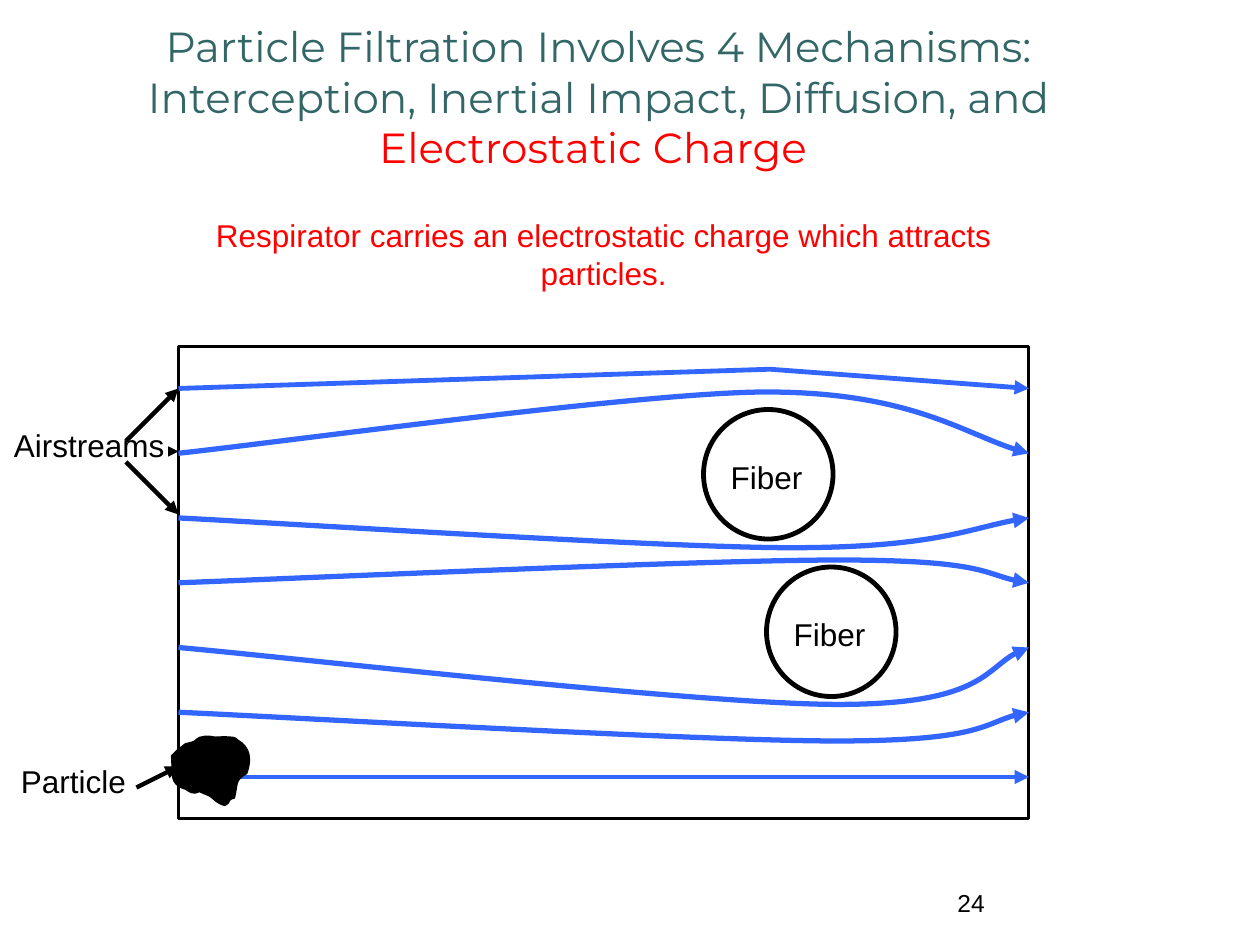
from pptx import Presentation
from pptx.dml.color import RGBColor
from pptx.enum.shapes import MSO_CONNECTOR as Conn, MSO_SHAPE as Form
from pptx.enum.text import MSO_ANCHOR as Anchor, MSO_AUTO_SIZE as Fit, PP_ALIGN as Align
from pptx.oxml.ns import qn
from pptx.oxml.xmlchemy import OxmlElement as Elem
from pptx.util import Pt

BLACK = RGBColor(0, 0, 0)
BLUE = RGBColor(0x33, 0x66, 0xFF)
TEAL = RGBColor(0x33, 0x66, 0x66)
RED = RGBColor(0xFF, 0, 0)

# Start point, then three points for each Bezier curve
BLOB = [
    (30, 2), (26, 1), (22, 0), (18, 1.4), (16.5, 2), (16, 3), (15, 3.6),
    (13.7, 4.3), (10, 5), (10, 5), (3.6, 10), (5.8, 8), (2, 12),
    (3, 22), (0, 28), (10, 31), (13, 33), (14.4, 34), (18, 32.4),
    (19.4, 33), (21.6, 34), (24, 35), (27, 37.4), (28, 39), (32.4, 40.3),
    (37, 38), (33, 37.4), (38, 36), (40, 28), (38, 26), (45, 22),
    (48, 14), (47, 7), (40, 3), (39, 2), (38, 1.4), (37.4, 1.4),
    (32, 0.7), (27, 1.4), (23, 1.4),
]
# Peak x, peak y and last control x of each curved airstream
BENDS = [(336, 26, 454), (350, 115, 457), (377, 122, 463),
         (377, 204.5, 463), (376, 225.4, 463)]


def write(frame, text, size=18, font="Arial", color=BLACK, align=Align.CENTER):
    """Add a run to the first paragraph of a text frame."""
    para = frame.paragraphs[0]
    para.alignment = align
    run = para.add_run()
    run.text = text
    run.font.size = Pt(size)
    run.font.name = font
    run.font.color.rgb = color


def label(slide, text, x, y, w, h=29, **style):
    frame = slide.shapes.add_textbox(Pt(x), Pt(y), Pt(w), Pt(h)).text_frame
    frame.word_wrap = True
    write(frame, text, **style)


def outline(shape, color, width):
    shape.line.color.rgb = color
    shape.line.width = Pt(width)


def point(shape):
    """Put an arrowhead at the end of a line."""
    tail = Elem("a:tailEnd")
    tail.set("type", "triangle")
    shape.line._get_or_add_ln().append(tail)


def arrow(slide, start, end, color=BLACK, width=2.5):
    line = slide.shapes.add_connector(Conn.STRAIGHT, *map(Pt, start + end))
    outline(line, color, width)
    line._element.spPr.append(Elem("a:effectLst"))
    point(line)


def trace(slide, x, y, points, color, width, curved=True, filled=False):
    """Draw a free outline; if curved, each three points make a Bezier curve."""
    spots = [(Pt(x + px), Pt(y + py)) for px, py in points]
    build = slide.shapes.build_freeform(*spots[0])
    build.add_line_segments(spots[1:], close=False)
    shape = build.convert_to_shape()
    shape.shadow.inherit = False
    if filled:
        shape.fill.solid()
        shape.fill.fore_color.rgb = color
    else:
        shape.fill.background()
    outline(shape, color, width)
    if curved:
        steps = list(shape._element.iter(qn("a:lnTo")))
        for first in range(0, len(steps), 3):
            curve = Elem("a:cubicBezTo")
            steps[first].addprevious(curve)
            for step in steps[first:first + 3]:
                curve.append(step[0])
                step.getparent().remove(step)
    return shape


def hollow(slide, form, x, y, w, h, width):
    shape = slide.shapes.add_shape(form, Pt(x), Pt(y), Pt(w), Pt(h))
    shape.shadow.inherit = False
    shape.fill.background()
    outline(shape, BLACK, width)


def fiber(slide, x, y):
    hollow(slide, Form.OVAL, x, y, 74, 74, 2.75)
    label(slide, "Fiber", x, y + 24, 72)


def streams(slide, x, y, w, first=24, gap=37):
    top, *rows, last = [first + gap * i for i in range(7)]
    arrow(slide, (x, y + last), (x + w, y + last), BLUE, 2.75)
    point(trace(slide, x, y, [(0, top), (338, 13), (w, top)], BLUE, 2.75, curved=False))
    for row, (peak, bend, near) in zip(rows, BENDS):
        rise = bend - row
        points = [(0, row), (peak / 6, row + 0.17 * rise), (peak * 0.79, bend),
                  (peak, bend), (peak + 81, bend), (near, row + 0.22 * rise), (w, row)]
        point(trace(slide, x, y, points, BLUE, 3))


def chamber(slide, x, y, w, h):
    hollow(slide, Form.RECTANGLE, x, y, w, h, 1.75)
    fiber(slide, x + 300, y + 36)
    fiber(slide, x + 336, y + 126)
    streams(slide, x, y, w)
    trace(slide, x - 6, y + 222, BLOB, BLACK, 0.75, filled=True)


def callouts(slide, x, y, edge):
    """Name the airstreams and the particle left of the chamber edge."""
    label(slide, "Airstreams", x, y, 102)
    arrow(slide, (x + 72, y + 24), (edge, y + 54))
    arrow(slide, (x + 72, y + 12), (edge, y - 18))
    arrow(slide, (x + 96, y + 18), (edge, y + 18), width=0.75)
    label(slide, "Particle", x, y + 192, 84)
    arrow(slide, (x + 78, y + 210), (edge, y + 198))


def heading(slide, x, y, w, h):
    title = slide.shapes.title
    title.left, title.top, title.width, title.height = map(Pt, (x, y, w, h))
    frame = title.text_frame
    frame.word_wrap = True
    frame.auto_size = Fit.NONE
    frame.vertical_anchor = Anchor.BOTTOM
    style = dict(size=24, font="Montserrat")
    write(frame, "Particle Filtration Involves 4 Mechanisms: "
          "Interception, Inertial Impact, Diffusion, and ", color=TEAL, **style)
    write(frame, "Electrostatic Charge ", color=RED, **style)


def main():
    deck = Presentation()
    deck.slide_width, deck.slide_height = Pt(720), Pt(540)
    slide = deck.slides.add_slide(deck.slide_layouts[5])
    heading(slide, 60, 12, 564, 90)
    label(slide, "Respirator carries an electrostatic charge which attracts particles.",
          102, 120, 486, 50, color=RED)
    chamber(slide, 102, 198, 486, 270)
    callouts(slide, 0, 240, 102)
    label(slide, "24", 540, 504, 126, 36, size=14, align=Align.LEFT)
    deck.save("out.pptx")


if __name__ == "__main__":
    main()
